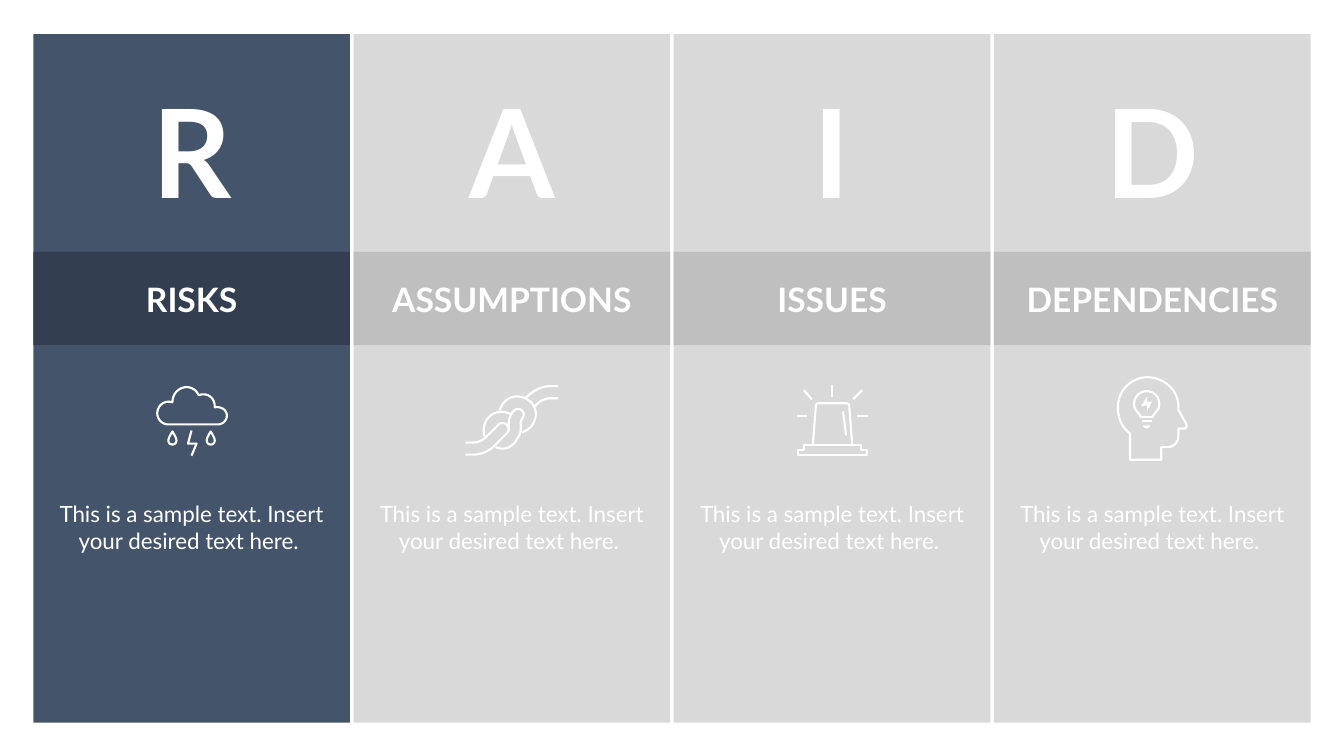
from pptx import Presentation
from pptx.dml.color import RGBColor
from pptx.enum.shapes import MSO_SHAPE as Shape
from pptx.enum.text import MSO_ANCHOR as Anchor, PP_ALIGN as Align
from pptx.util import Cm, Pt

WHITE = RGBColor(0xFF, 0xFF, 0xFF)
NAVY = RGBColor(0x44, 0x54, 0x6B)
DARK_NAVY = RGBColor(0x33, 0x3F, 0x50)
LIGHT_GRAY = RGBColor(0xD9, 0xD9, 0xD9)
MID_GRAY = RGBColor(0xBF, 0xBF, 0xBF)

COLUMN_LEFT, COLUMN_STEP, COLUMN_WIDTH = 0.84, 8.07, 7.98
COLUMN_TOP, COLUMN_HEIGHT = 0.86, 17.35
BAND_TOP, BAND_HEIGHT = 6.35, 2.34
TEXT_INSET, TEXT_WIDTH = 0.62, 6.74
ICON_TOP, ICON_UNIT = 9.4, 0.0254
SAMPLE = "This is a sample text. Insert your desired text here. "


def raindrop(x):
    """Return the closed path of a raindrop centred on x."""
    return [(x, 58), (x + 1, 60, x + 4, 64, x + 4, 67),
            (x + 4, 69.5, x + 2, 71, x, 71),
            (x - 2, 71, x - 4, 69.5, x - 4, 67),
            (x - 4, 64, x - 1, 60, x, 58)]


STORM = {
    "closed": [
        [(134, 51), (127, 51, 122.5, 45, 123, 39), (124, 32, 129, 28, 135.5, 28.5),
         (138, 29), (138, 20, 145, 14, 152, 14), (157, 14, 162, 17, 164, 22),
         (172, 19, 180, 24, 180, 33), (180, 34), (187, 33, 192, 37, 192, 42),
         (192, 47, 188, 51, 183, 51)],
        raindrop(138), raindrop(176)],
    "open": [[(157, 57), (153.5, 70), (162, 70), (157, 82)]],
}
KNOT = {
    "open": [
        [(203, 13), (196, 13), (188, 13, 181, 16, 175, 21), (170, 25)],
        [(203, 25), (196, 25), (191, 25, 186, 27, 183, 30), (180, 33)],
        [(145, 37), (148, 27, 157, 21, 167.5, 24), (178, 27, 183, 37, 180, 46),
         (178, 53, 173, 57, 167, 59)],
        [(130, 63), (127, 52, 132, 42, 142, 39), (146, 38, 151, 38, 156, 41)],
        [(154, 56), (154, 50), (154, 46, 156, 41, 158, 38.5),
         (161, 35, 165, 35, 167, 37), (170, 40, 169, 43, 167, 46),
         (165, 49, 166, 50, 166, 52), (166, 57, 166, 60, 163, 64),
         (160, 71, 154, 75, 148, 75), (145, 75, 143, 74, 141, 73.5)],
        [(111, 69), (118, 69), (123, 69, 128, 67, 131, 64), (144, 51),
         (147, 49, 150, 49, 152.5, 52), (155, 55, 154, 58, 152, 60),
         (140, 72), (134, 78, 126, 81, 118, 81), (111, 81)]],
}
SIREN = {
    "closed": [[(123, 81.5), (123, 76), (129, 76), (129, 71), (185.5, 71),
                (185.5, 76), (192, 76), (192, 81.5)]],
    "open": [
        [(138, 71), (141, 32), (141, 31, 142, 30, 144, 30), (171, 30),
         (173, 30, 174, 31, 174, 32), (177, 71)],
        [(168, 38), (171, 62)], [(157, 12), (157, 24)],
        [(122, 43), (132, 43)], [(182, 43), (193, 43)],
        [(129, 17), (137, 26)], [(178, 26), (187, 17)]],
}
THINKER = {
    "closed": [
        [(135, 86), (135, 60), (127, 54, 123, 45, 123, 35), (122, 18, 136, 4, 153, 4),
         (171, 5, 184, 19, 183, 35), (183, 36.5), (190, 49), (192, 52, 191, 55, 189, 55),
         (183, 55), (183, 62), (183, 69, 178, 73.5, 172, 73.5), (166, 73.5), (166, 86)],
        [(145.5, 43.5), (143, 38, 139, 37, 139, 31), (139, 23.5, 144.5, 18, 151.5, 18),
         (158.5, 18, 164, 23.5, 164, 31), (164, 37, 160, 38, 157.5, 43.5)]],
    "open": [[(147, 48), (157, 48)]],
    "solid": [[(148, 52), (155, 52), (155, 56, 148, 56, 148, 52)],
              [(152, 23), (146, 33), (152, 32), (152, 38), (157, 28), (152, 29)]],
}


def flatten(path, steps=10):
    """Turn a path of lines and cubic curves into plain points."""
    points = [path[0]]
    for segment in path[1:]:
        if len(segment) == 2:
            points.append(segment)
            continue
        x0, y0 = points[-1]
        x1, y1, x2, y2, x3, y3 = segment
        for step in range(1, steps + 1):
            t = step / steps
            a, b, c, d = (1 - t) ** 3, 3 * t * (1 - t) ** 2, 3 * t * t * (1 - t), t ** 3
            points.append((a * x0 + b * x1 + c * x2 + d * x3,
                           a * y0 + b * y1 + c * y2 + d * y3))
    return points


class RaidSlide:
    """Hold the slide and the style of its panels, texts and icons."""

    font = "Lato"
    ink = WHITE
    stroke = Pt(1.5)

    def __init__(self, slide):
        """Keep the slide to draw on."""
        self.slide = slide

    def panel(self, left, top, height, color):
        """Draw a plain block as wide as a column."""
        block = self.slide.shapes.add_shape(
            Shape.RECTANGLE, Cm(left), Cm(top), Cm(COLUMN_WIDTH), Cm(height))
        block.shadow.inherit = False
        block.fill.solid()
        block.fill.fore_color.rgb = color
        block.line.fill.background()

    def text(self, words, left, top, height, size, bold=False, inset=0, anchor=Anchor.TOP):
        """Write centred text inside a column."""
        frame = self.slide.shapes.add_textbox(
            Cm(left + TEXT_INSET), Cm(top), Cm(TEXT_WIDTH), Cm(height)).text_frame
        frame.word_wrap = True
        frame.vertical_anchor = anchor
        frame.margin_left = frame.margin_right = Cm(inset)
        frame.margin_top = frame.margin_bottom = Cm(inset / 2)
        frame.text = words
        paragraph = frame.paragraphs[0]
        paragraph.alignment = Align.CENTER
        font = paragraph.runs[0].font
        font.name, font.size, font.bold = self.font, Pt(size), bold
        font.color.rgb = self.ink

    def stroke_path(self, path, left, kind):
        """Draw one open, closed or solid path of an icon."""
        points = [(Cm(left + x * ICON_UNIT), Cm(ICON_TOP + y * ICON_UNIT))
                  for x, y in flatten(path)]
        builder = self.slide.shapes.build_freeform(*points[0])
        builder.add_line_segments(points[1:], close=kind != "open")
        outline = builder.convert_to_shape()
        outline.shadow.inherit = False
        if kind == "solid":
            outline.fill.solid()
            outline.fill.fore_color.rgb = self.ink
            outline.line.fill.background()
        else:
            outline.fill.background()
            outline.line.color.rgb = self.ink
            outline.line.width = self.stroke

    def icon(self, paths_by_kind, left):
        """Draw all paths of an icon."""
        for kind, paths in paths_by_kind.items():
            for path in paths:
                self.stroke_path(path, left, kind)

    def column(self, index, heading, icon, color, band_color):
        """Draw a column with its initial, heading, icon and description."""
        left = COLUMN_LEFT + index * COLUMN_STEP
        self.panel(left, COLUMN_TOP, COLUMN_HEIGHT, color)
        self.panel(left, BAND_TOP, BAND_HEIGHT, band_color)
        self.text(heading[0], left, 1.78, 4.01, 88, bold=True, inset=0.25)
        self.text(heading, left, 6.76, 1.57, 24, bold=True, anchor=Anchor.MIDDLE)
        self.text(SAMPLE, left, 12.6, 4.72, 16)
        self.icon(icon, left)


def main():
    """Build the slide and save it."""
    deck = Presentation()
    deck.slide_width, deck.slide_height = Cm(33.87), Cm(19.05)
    raid = RaidSlide(deck.slides.add_slide(deck.slide_layouts[6]))
    columns = [("RISKS", STORM, NAVY, DARK_NAVY),
               ("ASSUMPTIONS", KNOT, LIGHT_GRAY, MID_GRAY),
               ("ISSUES", SIREN, LIGHT_GRAY, MID_GRAY),
               ("DEPENDENCIES", THINKER, LIGHT_GRAY, MID_GRAY)]
    for index, column in enumerate(columns):
        raid.column(index, *column)
    deck.save("out.pptx")


if __name__ == "__main__":
    main()
